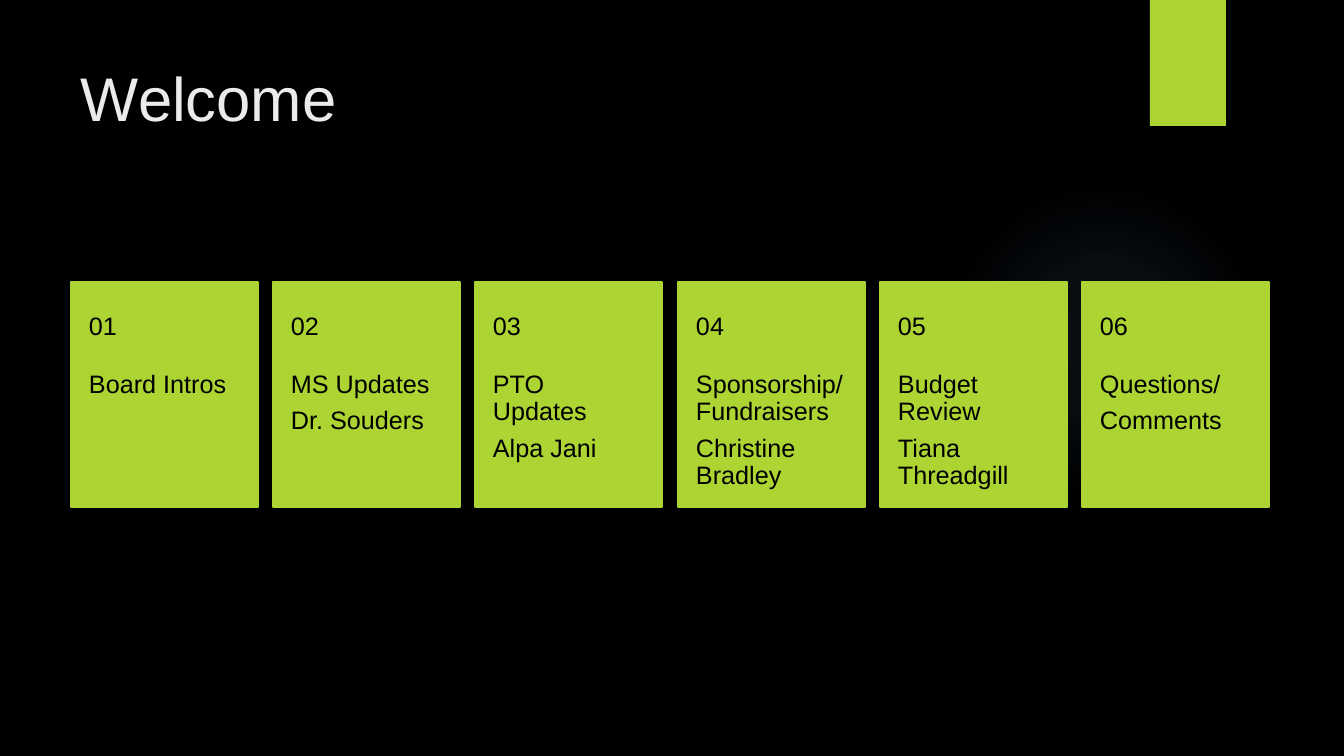
from pptx import Presentation
from pptx.dml.color import RGBColor
from pptx.enum.shapes import MSO_SHAPE
from pptx.enum.text import MSO_ANCHOR, MSO_AUTO_SIZE
from pptx.oxml import parse_xml
from pptx.oxml.ns import nsdecls, qn
from pptx.util import Emu, Pt
from dataclasses import dataclass


@dataclass(frozen=True)
class Theme:
    background: str = "000000"
    accent: str = "ACD433"
    glow: str = "7AC4F0"
    title: str = "EBEBEB"
    body: str = "000000"
    font: str = "Arial"
    title_size: int = 44
    body_size: int = 18


THEME = Theme()
PX_PER_INCH = 100.8
SLIDE_WIDTH, SLIDE_HEIGHT = 1344, 756

AGENDA = [
    ["Board Intros"],
    ["MS Updates", "Dr. Souders"],
    ["PTO Updates", "Alpa Jani"],
    ["Sponsorship/Fundraisers", "Christine Bradley"],
    ["Budget Review", "Tiana Threadgill"],
    ["Questions/", "Comments"],
]
ROW_LEFT, ROW_RIGHT, ROW_TOP = 71, 1269, 282
CARD_WIDTH, CARD_HEIGHT, NUMBER_HEIGHT = 187, 225, 90
CARD_INSET = 18

# Position in percent, opacity in percent
GLOW_STOPS = [(0, 7), (36, 6), (69, 0)]


def px(length):
    return Emu(round(length * 914400 / PX_PER_INCH))


def set_all(target, values):
    for name, value in values.items():
        setattr(target, name, value)


def add_block(slide, box, kind=MSO_SHAPE.RECTANGLE):
    """Add a flat accent-coloured shape without an outline."""
    block = slide.shapes.add_shape(kind, *map(px, box))
    block.shadow.inherit = False
    block.fill.solid()
    block.fill.fore_color.rgb = RGBColor.from_string(THEME.accent)
    block.line.fill.background()
    return block


def add_glow(slide, box):
    """Add an ellipse whose faint light fades outwards."""
    glow = add_block(slide, box, MSO_SHAPE.OVAL)
    stops = "".join(
        f'<a:gs pos="{position * 1000}"><a:srgbClr val="{THEME.glow}">'
        f'<a:alpha val="{opacity * 1000}"/></a:srgbClr></a:gs>'
        for position, opacity in GLOW_STOPS
    )
    gradient = parse_xml(
        f'<a:gradFill {nsdecls("a")} rotWithShape="1"><a:gsLst>{stops}</a:gsLst>'
        '<a:path path="circle"><a:fillToRect l="50000" t="50000" r="50000" b="50000"/>'
        "</a:path></a:gradFill>"
    )
    properties = glow.element.spPr
    properties.replace(properties.find(qn("a:solidFill")), gradient)


def add_text(slide, box, lines, size, color, insets, anchor=MSO_ANCHOR.TOP, spacing=None):
    """Add a text box; insets run left, top, right, bottom."""
    frame = slide.shapes.add_textbox(*map(px, box)).text_frame
    left, top, right, bottom = map(px, insets)
    set_all(frame, {
        "word_wrap": True,
        "auto_size": MSO_AUTO_SIZE.NONE,
        "vertical_anchor": anchor,
        "margin_left": left,
        "margin_top": top,
        "margin_right": right,
        "margin_bottom": bottom,
    })
    frame.text = "\n".join(lines)
    for paragraph in frame.paragraphs:
        set_all(paragraph, spacing or {})
        set_all(paragraph.font, {"name": THEME.font, "size": Pt(size)})
        paragraph.font.color.rgb = RGBColor.from_string(color)


def add_card(slide, left, number, lines):
    card = add_block(slide, (left, ROW_TOP, CARD_WIDTH, CARD_HEIGHT))
    card.line.color.rgb = RGBColor.from_string(THEME.accent)
    card.line.width = Pt(1.5)

    spacing = {"line_spacing": 0.9, "space_after": Pt(0.35 * THEME.body_size)}
    topic_box = (left, ROW_TOP + NUMBER_HEIGHT, CARD_WIDTH, CARD_HEIGHT - NUMBER_HEIGHT)
    add_text(slide, topic_box, lines, THEME.body_size, THEME.body,
             (CARD_INSET, 0, CARD_INSET, 2 * CARD_INSET), spacing=spacing)
    number_box = (left, ROW_TOP, CARD_WIDTH, NUMBER_HEIGHT)
    add_text(slide, number_box, [f"{number:02}"], THEME.body_size, THEME.body,
             (CARD_INSET,) * 4, MSO_ANCHOR.MIDDLE, spacing)


def main():
    deck = Presentation()
    set_all(deck, {"slide_width": px(SLIDE_WIDTH), "slide_height": px(SLIDE_HEIGHT)})
    slide = deck.slides.add_slide(deck.slide_layouts[6])
    slide.background.fill.solid()
    slide.background.fill.fore_color.rgb = RGBColor.from_string(THEME.background)

    add_glow(slide, (949, 184, 310, 310))
    add_block(slide, (1150, 0, 76, 126))
    add_text(slide, (71, 50, 1109, 154), ["Welcome"], THEME.title_size, THEME.title,
             (10, 10, 10, 5))

    pitch = (ROW_RIGHT - CARD_WIDTH - ROW_LEFT) / (len(AGENDA) - 1)
    for index, lines in enumerate(AGENDA):
        add_card(slide, ROW_LEFT + round(index * pitch), index + 1, lines)

    deck.save("out.pptx")


if __name__ == "__main__":
    main()
